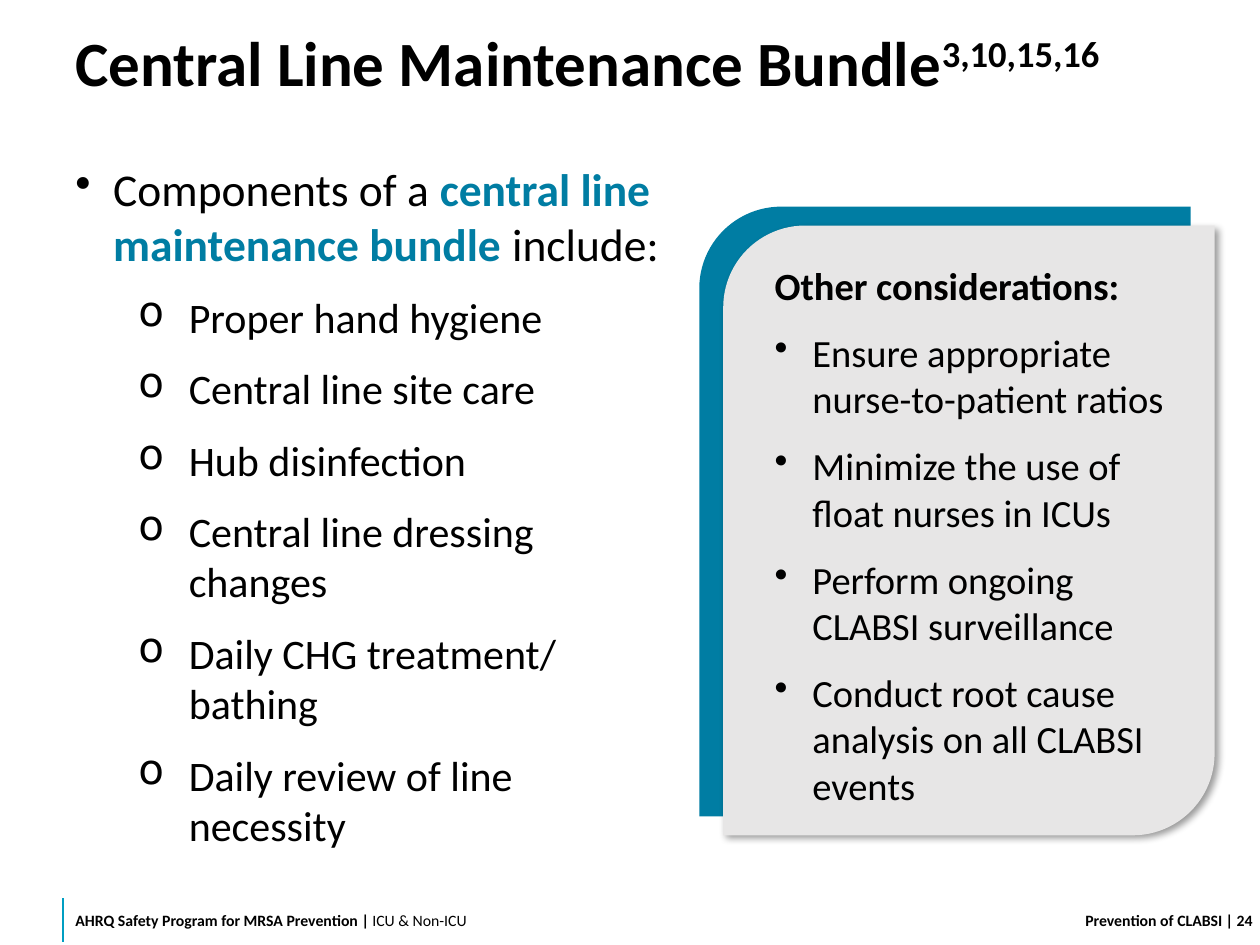
from dataclasses import dataclass

from lxml import etree
from pptx import Presentation
from pptx import util as u
from pptx.dml.color import RGBColor
from pptx.enum import shapes as s, text as t
from pptx.oxml.ns import qn

HUES = {"ink": "000000", "teal": "007DA3", "rule": "009EC2", "gray": "E7E6E6"}
FACE = "Calibri"


def inch(val: float) -> u.Length:
    return u.Cm(val * 2.54)


def hue(name: str) -> RGBColor:
    return RGBColor.from_string(HUES[name])


@dataclass
class Run:
    text: str
    bold: bool | None = None
    color: str | None = None
    sup: bool = False


@dataclass
class Para:
    runs: list[Run]
    size: float
    bold: bool = False
    mark: str = ""
    left: float = 0
    hang: float = 0
    lead: float | None = None
    align: t.PP_ALIGN = t.PP_ALIGN.LEFT


@dataclass
class Box:
    at: tuple[float, float, float, float]
    paras: list[Para]
    inset: tuple[float, float, float, float] = (0.1, 0.05, 0.1, 0.05)
    anchor: t.MSO_ANCHOR = t.MSO_ANCHOR.TOP


def add_runs(para, runs: list[Run]) -> None:
    for item in runs:
        for i, line in enumerate(item.text.split("\n")):
            if i:
                para.add_line_break()
            run = para.add_run()
            run.text = line
            if item.bold is not None:
                run.font.bold = item.bold
            if item.color:
                run.font.color.rgb = hue(item.color)
            if item.sup:
                run.font._element.set("baseline", "30000")


def add_box(slide, box: Box) -> None:
    frame = slide.shapes.add_textbox(*map(inch, box.at)).text_frame
    frame.word_wrap = True
    frame.vertical_anchor = box.anchor
    (frame.margin_left, frame.margin_top,
     frame.margin_right, frame.margin_bottom) = map(inch, box.inset)
    for i, item in enumerate(box.paras):
        para = frame.add_paragraph() if i else frame.paragraphs[0]
        para.alignment = item.align
        if i:
            para.space_before = u.Pt(12)
        if item.lead:
            para.line_spacing = item.lead
        if item.mark:
            props = para._p.get_or_add_pPr()
            props.set("marL", str(inch(item.left)))
            props.set("indent", str(-inch(item.hang)))
            etree.SubElement(props, qn("a:buChar")).set("char", item.mark)
        font = para.font
        font.name, font.size, font.bold = FACE, u.Pt(item.size), item.bold
        font.color.rgb = hue("ink")
        add_runs(para, item.runs)


def add_panel(slide, left: float, top: float, fill: str):
    panel = slide.shapes.add_shape(s.MSO_SHAPE.ROUND_2_DIAG_RECTANGLE,
                                   *map(inch, (left, top, 3.9, 4.84)))
    panel.shadow.inherit = False
    panel.fill.solid()
    panel.fill.fore_color.rgb = hue(fill)
    panel.line.fill.background()
    return panel


def add_shade(panel) -> None:
    effects = panel._element.spPr.find(qn("a:effectLst"))
    shade = etree.SubElement(effects, qn("a:outerShdw"), blurRad=str(u.Pt(4)),
                             dist=str(u.Pt(3)), dir="2700000", algn="tl", rotWithShape="0")
    color = etree.SubElement(shade, qn("a:srgbClr"), val=HUES["ink"])
    etree.SubElement(color, qn("a:alpha"), val="40000")


def add_rule(slide) -> None:
    rule = slide.shapes.add_connector(s.MSO_CONNECTOR.STRAIGHT,
                                      *map(inch, (0.5, 7.13, 0.5, 7.48)))
    rule.line.color.rgb = hue("rule")
    rule.line.width = u.Pt(1)
    etree.SubElement(rule._element.spPr, qn("a:effectLst"))


MID = t.MSO_ANCHOR.MIDDLE

TITLE = Box((0.5, 0, 9, 1), [
    Para([Run("Central Line Maintenance Bundle"), Run("3,10,15,16", sup=True)],
         36, bold=True, lead=0.9)], (0.1, 0.1, 0.1, 0.05), MID)

STEPS = ["Proper hand hygiene", "Central line site care", "Hub disinfection",
         "Central line dressing changes", "Daily CHG treatment/\nbathing",
         "Daily review of line necessity"]
BUNDLE = Box((0.5, 1.23, 4.94, 5.61), [
    Para([Run("Components of a "),
          Run("central line maintenance bundle ", True, "teal"),
          Run("include:")], 26, mark="•", left=0.3, hang=0.3),
    *[Para([Run(step)], 24, mark="o", left=0.9, hang=0.4) for step in STEPS]])

POINTS = ["Ensure appropriate nurse-to-patient ratios",
          "Minimize the use of float nurses in ICUs",
          "Perform ongoing CLABSI surveillance",
          "Conduct root cause analysis on all CLABSI events"]
OTHER = Box((6.05, 2.03, 3.4, 4.45), [
    Para([Run("Other considerations:")], 22, bold=True),
    *[Para([Run(point)], 22, mark="•", left=0.3, hang=0.3) for point in POINTS]])

FOOTER = [
    Box((0.5, 7.1, 4.1, 0.4),
        [Para([Run("AHRQ Safety Program for MRSA Prevention | ", True),
               Run("ICU & Non-ICU")], 9)], (0.1, 0, 0.1, 0), MID),
    Box((7.1, 7.1, 2.6, 0.4),
        [Para([Run("Prevention of CLABSI")], 9, bold=True, align=t.PP_ALIGN.RIGHT)],
        (0.1, 0.05, 0, 0.05), MID),
    Box((9.7, 7.1, 0.3, 0.4), [Para([Run(" | 24")], 9, bold=True)],
        (0, 0.05, 0, 0.05), MID),
]


def main() -> None:
    deck = Presentation()
    deck.slide_width, deck.slide_height = inch(10), inch(7.5)
    slide = deck.slides.add_slide(deck.slide_layouts[6])

    # Footer rule
    add_rule(slide)

    # Offset panels behind the considerations
    add_panel(slide, 5.55, 1.64, "teal")
    add_shade(add_panel(slide, 5.74, 1.79, "gray"))

    # Title, lists and footer
    for box in [TITLE, BUNDLE, OTHER, *FOOTER]:
        add_box(slide, box)

    deck.save("out.pptx")


if __name__ == "__main__":
    main()
